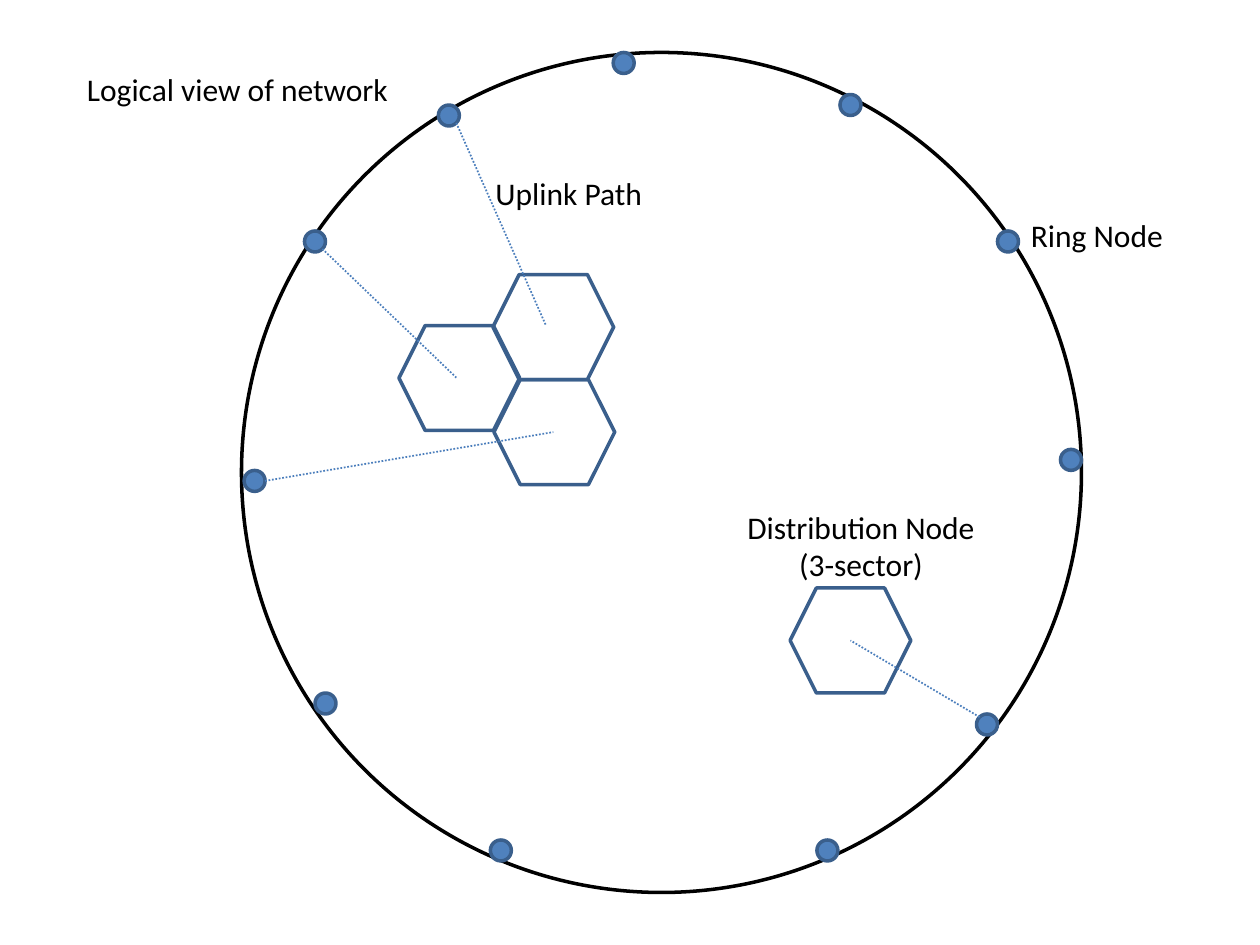
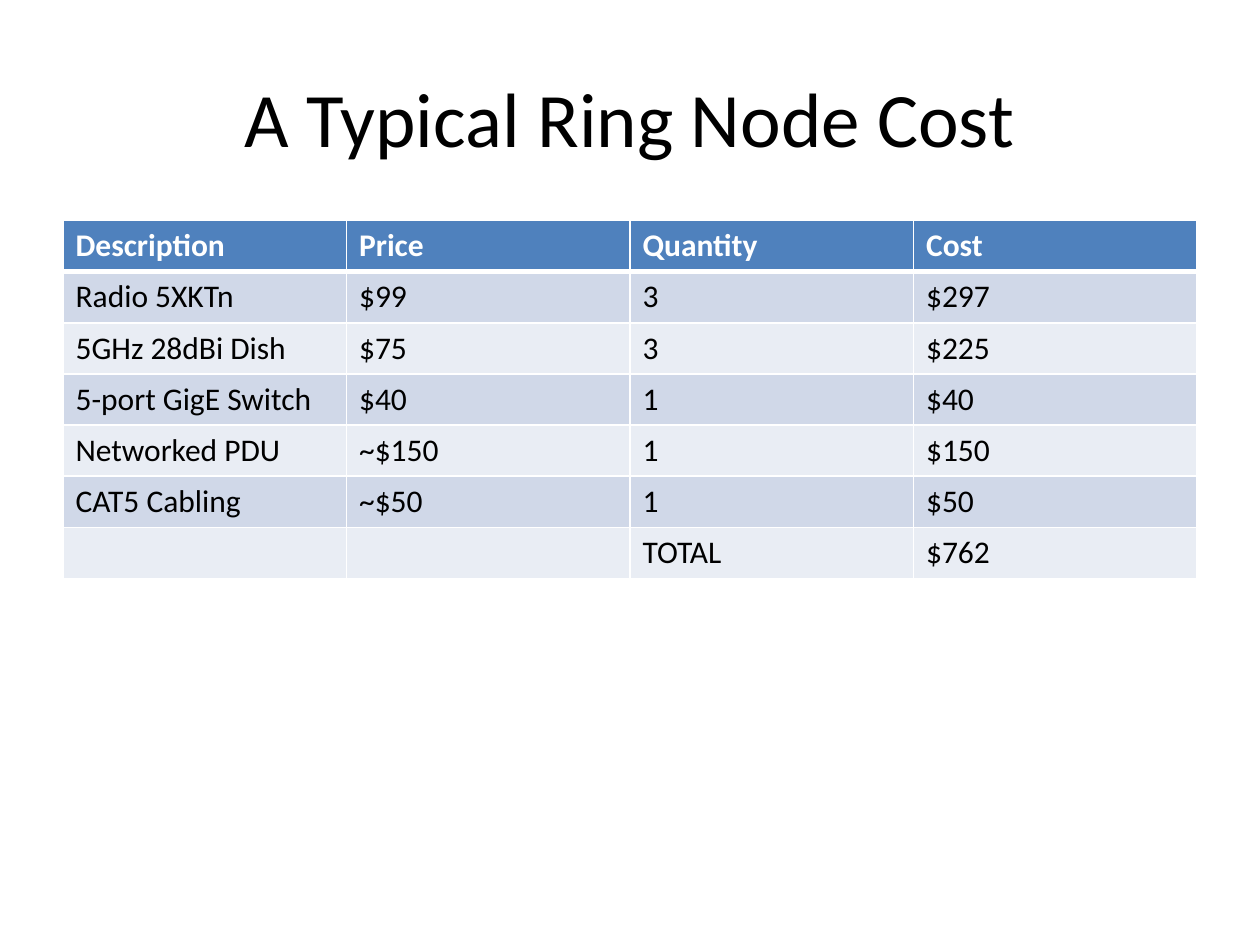
"""Builds two slides: a ring network diagram and a ring node cost table."""

from dataclasses import dataclass
from math import cos, radians, sin

from pptx import Presentation
from pptx.dml.color import RGBColor
from pptx.enum.dml import MSO_LINE
from pptx.enum.shapes import MSO_CONNECTOR, MSO_SHAPE
from pptx.enum.text import MSO_ANCHOR, PP_ALIGN
from pptx.oxml.ns import qn
from pptx.shapes.autoshape import Shape
from pptx.slide import Slide
from pptx.table import _Cell
from pptx.text.text import TextFrame
from pptx.util import Inches, Length, Pt
from lxml.etree import SubElement


@dataclass(frozen=True)
class Theme:
    """Colours, type sizes and line widths of both slides."""

    font: str = "Calibri"
    black: str = "000000"
    white: str = "FFFFFF"
    accent: str = "4F81BD"
    outline: str = "3A5F8C"
    uplink: str = "4B7EBC"
    bands: tuple[str, str] = ("D0D8E8", "E9EDF4")
    title_size: int = 44
    body_size: int = 18
    shape_line: int = 2
    thin_line: int = 1
    header_line: int = 3


@dataclass(frozen=True)
class Point:
    """A place on the grid."""

    column: float
    row: float


@dataclass(frozen=True)
class Area:
    """A rectangle on the grid."""

    column: float
    row: float
    columns: float
    rows: float


@dataclass(frozen=True)
class Uplink:
    """A path from the rim of a ring node, at an angle, to a sector's centre."""

    node: Point
    angle: float
    sector: Point


@dataclass(frozen=True)
class Label:
    """A text and the area it takes."""

    text: str
    area: Area
    alignment: PP_ALIGN = PP_ALIGN.LEFT


THEME = Theme()
SLIDE_WIDTH, SLIDE_HEIGHT = Inches(10), Inches(7.5)
GRID_COLUMNS, GRID_ROWS = 120, 90

RING = Area(23, 5, 80, 80)
NODE_SIZE = 2
SECTOR_COLUMNS, SECTOR_ROWS = 11.5, 10

WEST, NORTHWEST, NORTH = Point(24.25, 45.8), Point(30, 23), Point(42.75, 11)
SOUTHEAST = Point(94, 69)
RING_NODES = [
    NORTHWEST, NORTH, Point(59.4, 6), Point(81, 10), Point(96, 23), Point(102, 43.8),
    SOUTHEAST, Point(78.8, 81), Point(47.7, 81), Point(31, 67), WEST,
]
SECTORS = [Point(43.75, 36), Point(52.7, 31.15), Point(52.8, 41.15), Point(81, 61)]
UPLINKS = [
    Uplink(NORTH, 45, Point(52, 31)),
    Uplink(NORTHWEST, 45, Point(43.5, 36)),
    Uplink(WEST, 0, Point(52.7, 41.15)),
    Uplink(SOUTHEAST, 225, Point(81, 61)),
]
LABELS = [
    Label("Ring Node", Area(97, 20, 17, 4.85)),
    Label("Distribution Node\n(3-sector)", Area(68.5, 47.75, 27, 8.5), PP_ALIGN.CENTER),
    Label("Uplink Path", Area(46, 16, 18.25, 4.85)),
    Label("Logical view of network", Area(7.1, 6.1, 34.1, 4.85)),
]

TITLE_AREA = Area(6, 3.6, 108, 15)
TABLE_AREA = Area(6, 21, 108, 34.1)
COSTS = [
    ("Description", "Price", "Quantity", "Cost"),
    ("Radio 5XKTn", "$99", "3", "$297"),
    ("5GHz 28dBi Dish", "$75", "3", "$225"),
    ("5-port GigE Switch", "$40", "1", "$40"),
    ("Networked PDU", "~$150", "1", "$150"),
    ("CAT5 Cabling", "~$50", "1", "$50"),
    ("", "", "TOTAL", "$762"),
]


def across(columns: float) -> Length:
    """Turn grid columns into a length."""
    return Length(round(SLIDE_WIDTH * columns / GRID_COLUMNS))


def down(rows: float) -> Length:
    """Turn grid rows into a length."""
    return Length(round(SLIDE_HEIGHT * rows / GRID_ROWS))


def place(area: Area) -> tuple[Length, Length, Length, Length]:
    """Give left, top, width and height of a grid area."""
    return across(area.column), down(area.row), across(area.columns), down(area.rows)


def centred(point: Point, columns: float, rows: float) -> Area:
    """Give the area of a size around a point."""
    return Area(point.column - columns / 2, point.row - rows / 2, columns, rows)


def colour(value: str) -> RGBColor:
    """Turn a hexadecimal value into a colour."""
    return RGBColor.from_string(value)


def format_text(
    frame: TextFrame,
    size: int = THEME.body_size,
    value: str = THEME.black,
    bold: bool = False,
    alignment: PP_ALIGN = PP_ALIGN.LEFT,
) -> None:
    """Format every paragraph and run of a text frame."""
    for paragraph in frame.paragraphs:
        paragraph.alignment = alignment
        for run in paragraph.runs:
            run.font.name = THEME.font
            run.font.size = Pt(size)
            run.font.bold = bold
            run.font.color.rgb = colour(value)


def draw_shape(
    slide: Slide, kind: MSO_SHAPE, area: Area, line: str, fill: str | None = None
) -> Shape:
    """Draw an outlined preset shape, filled if a fill is given."""
    shape = slide.shapes.add_shape(kind, *place(area))
    shape.shadow.inherit = False
    shape.line.color.rgb = colour(line)
    shape.line.width = Pt(THEME.shape_line)
    if fill:
        shape.fill.solid()
        shape.fill.fore_color.rgb = colour(fill)
    else:
        shape.fill.background()
    return shape


def draw_uplink(slide: Slide, uplink: Uplink) -> None:
    """Draw a dotted path from a ring node to a sector."""
    radius, angle = NODE_SIZE / 2, radians(uplink.angle)
    connector = slide.shapes.add_connector(
        MSO_CONNECTOR.STRAIGHT,
        across(uplink.node.column + radius * cos(angle)),
        down(uplink.node.row + radius * sin(angle)),
        across(uplink.sector.column),
        down(uplink.sector.row),
    )
    connector.line.color.rgb = colour(THEME.uplink)
    connector.line.width = Pt(THEME.thin_line)
    connector.line.dash_style = MSO_LINE.ROUND_DOT
    SubElement(connector._element.spPr, qn("a:effectLst"))


def draw_label(slide: Slide, label: Label) -> None:
    """Write a label in a text box."""
    frame = slide.shapes.add_textbox(*place(label.area)).text_frame
    frame.word_wrap = True
    frame.text = label.text
    format_text(frame, alignment=label.alignment)


def draw_title(slide: Slide, text: str) -> None:
    """Fill, move and format the title placeholder."""
    title = slide.shapes.title
    title.left, title.top, title.width, title.height = place(TITLE_AREA)
    title.text_frame.text = text
    title.text_frame.vertical_anchor = MSO_ANCHOR.MIDDLE
    format_text(title.text_frame, THEME.title_size, alignment=PP_ALIGN.CENTER)


def set_borders(cell: _Cell, top: int, bottom: int) -> None:
    """Give a cell white borders of the given top and bottom widths."""
    properties = cell._tc.get_or_add_tcPr()
    widths = {"L": THEME.thin_line, "R": THEME.thin_line, "T": top, "B": bottom}
    for side, width in widths.items():
        border = SubElement(properties, qn(f"a:ln{side}"), w=str(Pt(width)))
        fill = SubElement(border, qn("a:solidFill"))
        SubElement(fill, qn("a:srgbClr"), val=THEME.white)


def draw_table(slide: Slide, rows: list[tuple[str, ...]]) -> None:
    """Draw a table with a header row and banded body rows."""
    table = slide.shapes.add_table(len(rows), len(rows[0]), *place(TABLE_AREA)).table
    for row, texts in enumerate(rows):
        header = row == 0
        table.rows[row].height = down(TABLE_AREA.rows / len(rows))
        for column, text in enumerate(texts):
            cell = table.cell(row, column)
            set_borders(
                cell,
                THEME.header_line if row == 1 else THEME.thin_line,
                THEME.header_line if header else THEME.thin_line,
            )
            cell.fill.solid()
            band = THEME.accent if header else THEME.bands[(row - 1) % 2]
            cell.fill.fore_color.rgb = colour(band)
            if text:
                cell.text_frame.text = text
                value = THEME.white if header else THEME.black
                format_text(cell.text_frame, value=value, bold=header)


def build_network_slide(presentation: Presentation) -> None:
    """Build the logical view of the network."""
    slide = presentation.slides.add_slide(presentation.slide_layouts[6])
    draw_shape(slide, MSO_SHAPE.OVAL, RING, THEME.black)
    for node in RING_NODES:
        area = centred(node, NODE_SIZE, NODE_SIZE)
        draw_shape(slide, MSO_SHAPE.OVAL, area, THEME.outline, THEME.accent)
    for sector in SECTORS:
        area = centred(sector, SECTOR_COLUMNS, SECTOR_ROWS)
        draw_shape(slide, MSO_SHAPE.HEXAGON, area, THEME.outline)
    for uplink in UPLINKS:
        draw_uplink(slide, uplink)
    for label in LABELS:
        draw_label(slide, label)


def build_cost_slide(presentation: Presentation) -> None:
    """Build the cost table of a ring node."""
    slide = presentation.slides.add_slide(presentation.slide_layouts[5])
    draw_title(slide, "A Typical Ring Node Cost")
    draw_table(slide, COSTS)


def main() -> None:
    """Build and save the presentation."""
    presentation = Presentation()
    presentation.slide_width, presentation.slide_height = SLIDE_WIDTH, SLIDE_HEIGHT
    build_network_slide(presentation)
    build_cost_slide(presentation)
    presentation.save("out.pptx")


if __name__ == "__main__":
    main()
